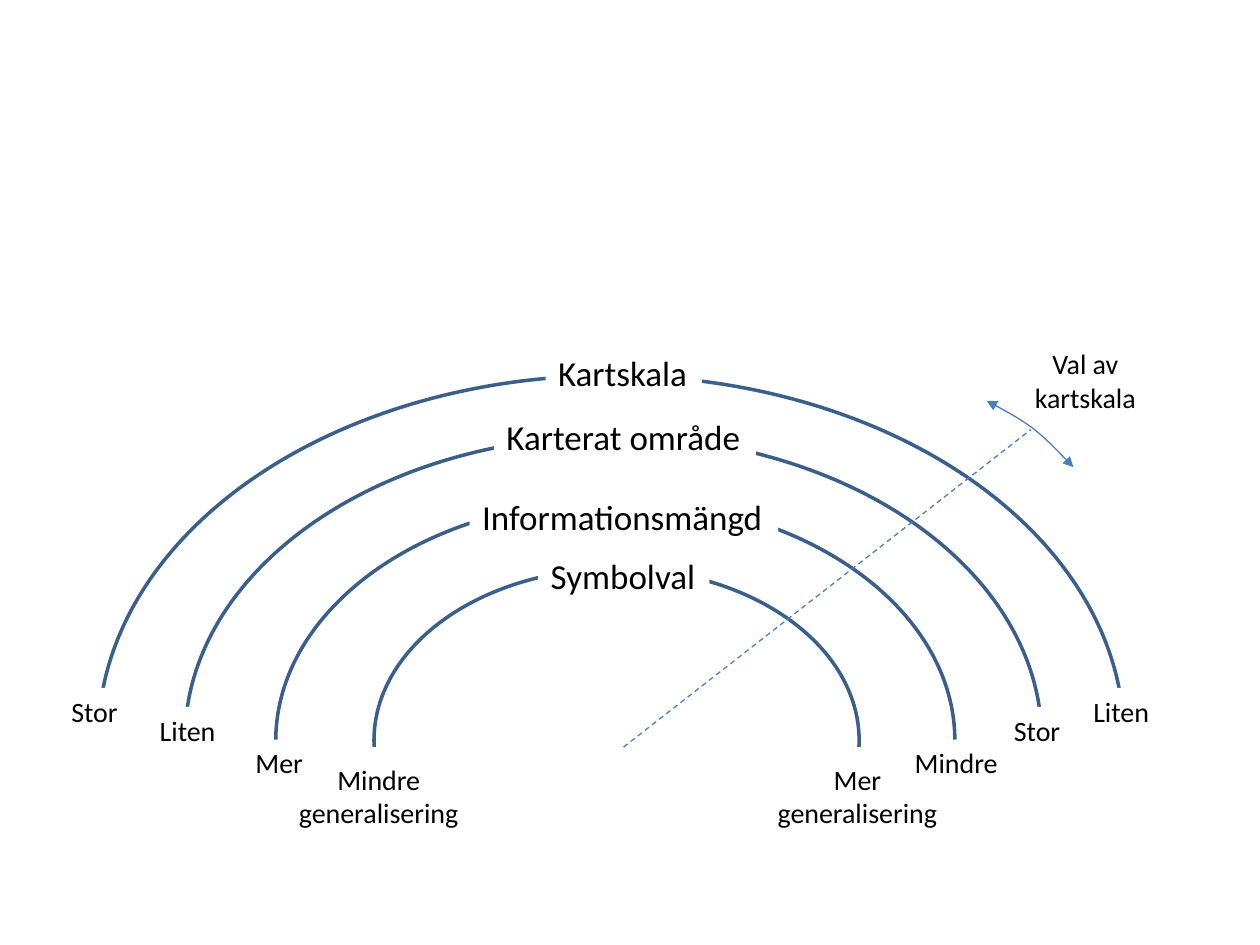
from dataclasses import dataclass

import pptx
import pptx.dml.color
import pptx.enum.dml
import pptx.enum.shapes
import pptx.enum.text
import pptx.oxml
import pptx.oxml.ns
import pptx.util
from pptx.util import Cm


@dataclass(frozen=True)
class Theme:
    font: str = "Calibri"
    title_size: float = 20
    label_size: float = 16
    arc_width: float = 2
    pointer_width: float = 0.75
    background: str = "FFFFFF"
    text: str = "000000"
    arc: str = "3A5F8C"
    pointer: str = "4B7EBC"


@dataclass(frozen=True)
class Box:
    """Position and size in centimetres."""
    left: float
    top: float
    width: float
    height: float

    def lengths(self):
        return Cm(self.left), Cm(self.top), Cm(self.width), Cm(self.height)


@dataclass(frozen=True)
class Label:
    text: str
    box: Box
    wrap: bool = False
    centred: bool = False


@dataclass(frozen=True)
class Arc:
    """One half ellipse with its title and the labels at its two ends."""
    ellipse: Box
    title: Label
    left_end: Label
    right_end: Label


THEME = Theme()
TITLE_H, LINE_H, TWO_LINES_H = 1.12, 0.94, 1.63

ARCS = [
    Arc(Box(1.98, 7.57, 20.68, 14.63),
        Label("Kartskala", Box(11, 6.96, 3.15, TITLE_H)),
        Label("Stor", Box(1.19, 13.87, 1.65, TWO_LINES_H), wrap=True),
        Label("Liten", Box(21.79, 13.87, 1.65, TWO_LINES_H), wrap=True)),
    Arc(Box(3.73, 8.79, 17.27, 12.22),
        Label("Karterat område", Box(9.96, 8.26, 5.28, TITLE_H)),
        Label("Liten", Box(2.97, 14.25, 1.65, LINE_H)),
        Label("Stor", Box(20.19, 14.25, 1.47, LINE_H))),
    Arc(Box(5.56, 10.08, 13.69, 9.7),
        Label("Informationsmängd", Box(9.47, 9.86, 6.22, TITLE_H)),
        Label("Mer", Box(4.9, 14.91, 1.47, LINE_H)),
        Label("Mindre", Box(18.19, 14.91, 2.21, LINE_H))),
    Arc(Box(7.54, 11.46, 9.78, 6.93),
        Label("Symbolval", Box(10.85, 11.05, 3.45, TITLE_H)),
        Label("Mindre\ngeneralisering", Box(5.54, 15.24, 4.19, TWO_LINES_H),
              wrap=True, centred=True),
        Label("Mer generalisering", Box(15.19, 15.24, 4.19, TWO_LINES_H),
              wrap=True, centred=True)),
]
LOWER_HALF_COVER = Box(1.55, 15.06, 22.05, 7.44)
SCALE_CHOICE = Label("Val av kartskala", Box(20.24, 6.86, 3.28, TWO_LINES_H),
                     wrap=True, centred=True)
POINTER_START, POINTER_END = (12.57, 15.06), (20.78, 8.66)
# Cubic curves: start, two control points, end
SWING = [
    ((19.89, 8.08), (20.22, 8.26), (20.55, 8.43), (20.83, 8.64)),
    ((20.83, 8.64), (21.11, 8.86), (21.37, 9.14), (21.64, 9.42)),
]


def rgb(colour: str):
    return pptx.dml.color.RGBColor.from_string(colour)


def style_line(line, colour: str, width: float) -> None:
    line.color.rgb = rgb(colour)
    line.width = pptx.util.Pt(width)


def add_ellipse(slide, box: Box) -> None:
    ellipse = slide.shapes.add_shape(
        pptx.enum.shapes.MSO_SHAPE.FLOWCHART_CONNECTOR, *box.lengths())
    ellipse.shadow.inherit = False
    ellipse.fill.background()
    style_line(ellipse.line, THEME.arc, THEME.arc_width)


def add_cover(slide, box: Box) -> None:
    """Hide the lower halves of the ellipses."""
    cover = slide.shapes.add_shape(
        pptx.enum.shapes.MSO_SHAPE.RECTANGLE, *box.lengths())
    cover.shadow.inherit = False
    cover.fill.solid()
    cover.fill.fore_color.rgb = rgb(THEME.background)
    cover.line.fill.background()


def add_label(slide, label: Label, size: float) -> None:
    box = slide.shapes.add_textbox(*label.box.lengths())
    box.fill.solid()
    box.fill.fore_color.rgb = rgb(THEME.background)
    frame = box.text_frame
    frame.text = label.text
    frame.word_wrap = label.wrap
    frame.auto_size = pptx.enum.text.MSO_AUTO_SIZE.SHAPE_TO_FIT_TEXT
    for paragraph in frame.paragraphs:
        if label.centred:
            paragraph.alignment = pptx.enum.text.PP_ALIGN.CENTER
        for run in paragraph.runs:
            run.font.name = THEME.font
            run.font.size = pptx.util.Pt(size)
            run.font.color.rgb = rgb(THEME.text)


def add_pointer(slide) -> None:
    pointer = slide.shapes.add_connector(
        pptx.enum.shapes.MSO_CONNECTOR.STRAIGHT,
        *(Cm(value) for value in POINTER_START + POINTER_END))
    style_line(pointer.line, THEME.pointer, THEME.pointer_width)
    pointer.line.dash_style = pptx.enum.dml.MSO_LINE.DASH
    properties = pointer._element.spPr
    properties.append(properties.makeelement(pptx.oxml.ns.qn("a:effectLst"), {}))


def curve_points(curve, steps: int = 8) -> list:
    """Points along a cubic curve, without its start."""
    points = []
    for step in range(1, steps + 1):
        t = step / steps
        weights = ((1 - t) ** 3, 3 * t * (1 - t) ** 2, 3 * t ** 2 * (1 - t), t ** 3)
        points.append(tuple(
            Cm(sum(weight * value for weight, value in zip(weights, values)))
            for values in zip(*curve)))
    return points


def add_swing_arrow(slide) -> None:
    start_x, start_y = SWING[0][0]
    builder = slide.shapes.build_freeform(Cm(start_x), Cm(start_y))
    for curve in SWING:
        builder.add_line_segments(curve_points(curve), close=False)
    arrow = builder.convert_to_shape()
    arrow.shadow.inherit = False
    arrow.fill.background()
    style_line(arrow.line, THEME.pointer, THEME.pointer_width)
    outline = arrow.line._get_or_add_ln()
    for end in ("a:headEnd", "a:tailEnd"):
        outline.append(outline.makeelement(pptx.oxml.ns.qn(end), {"type": "triangle"}))


def main() -> None:
    presentation = pptx.Presentation()
    presentation.slide_width, presentation.slide_height = Cm(25.4), Cm(19.05)
    slide = presentation.slides.add_slide(presentation.slide_layouts[6])

    add_label(slide, SCALE_CHOICE, THEME.label_size)
    for arc in ARCS:
        add_ellipse(slide, arc.ellipse)
    add_cover(slide, LOWER_HALF_COVER)
    for arc in ARCS:
        add_label(slide, arc.title, THEME.title_size)
    # Innermost first, so that outer labels lie on top where boxes overlap
    for arc in reversed(ARCS):
        add_label(slide, arc.right_end, THEME.label_size)
        add_label(slide, arc.left_end, THEME.label_size)
    add_pointer(slide)
    add_swing_arrow(slide)

    presentation.save("out.pptx")


if __name__ == "__main__":
    main()
